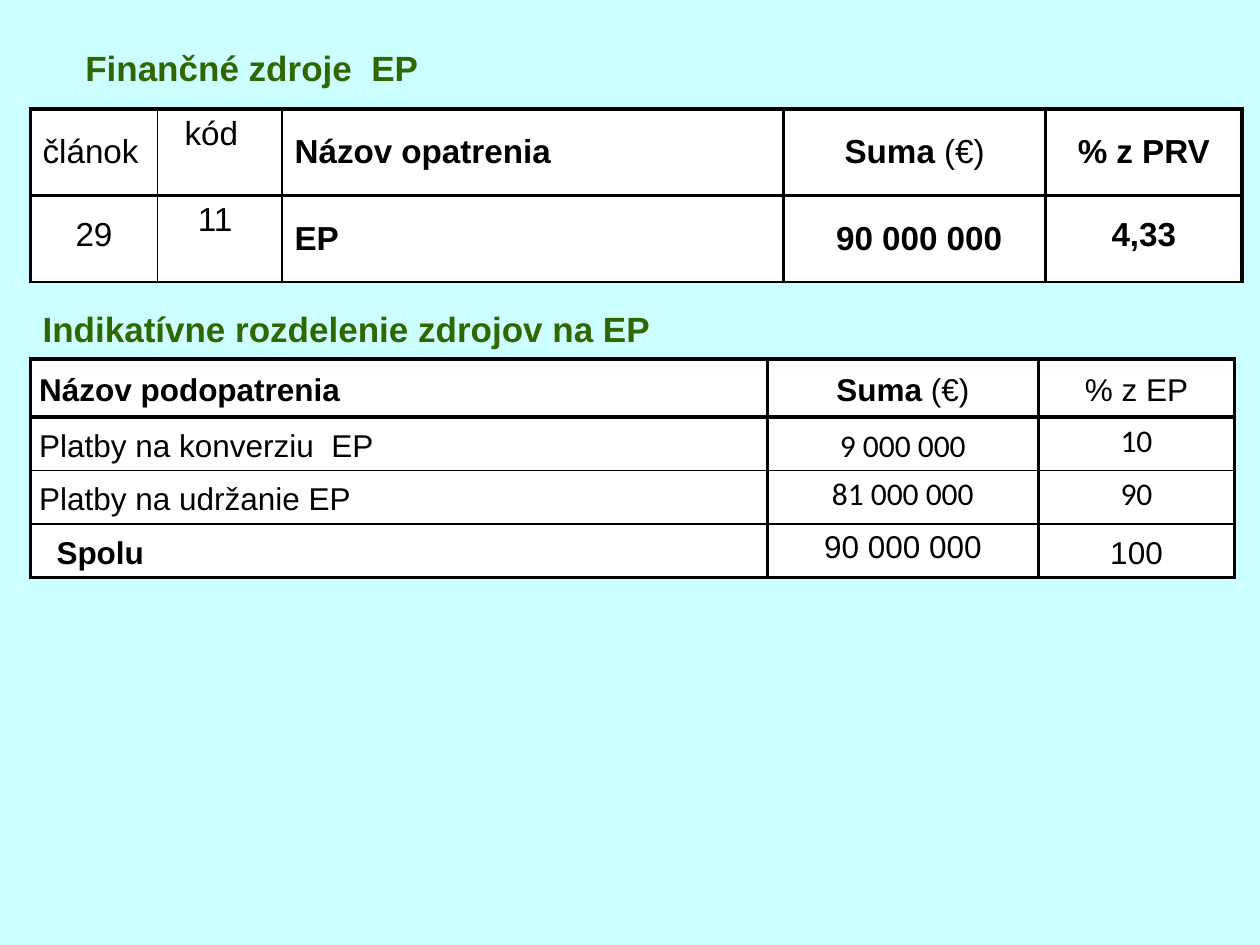
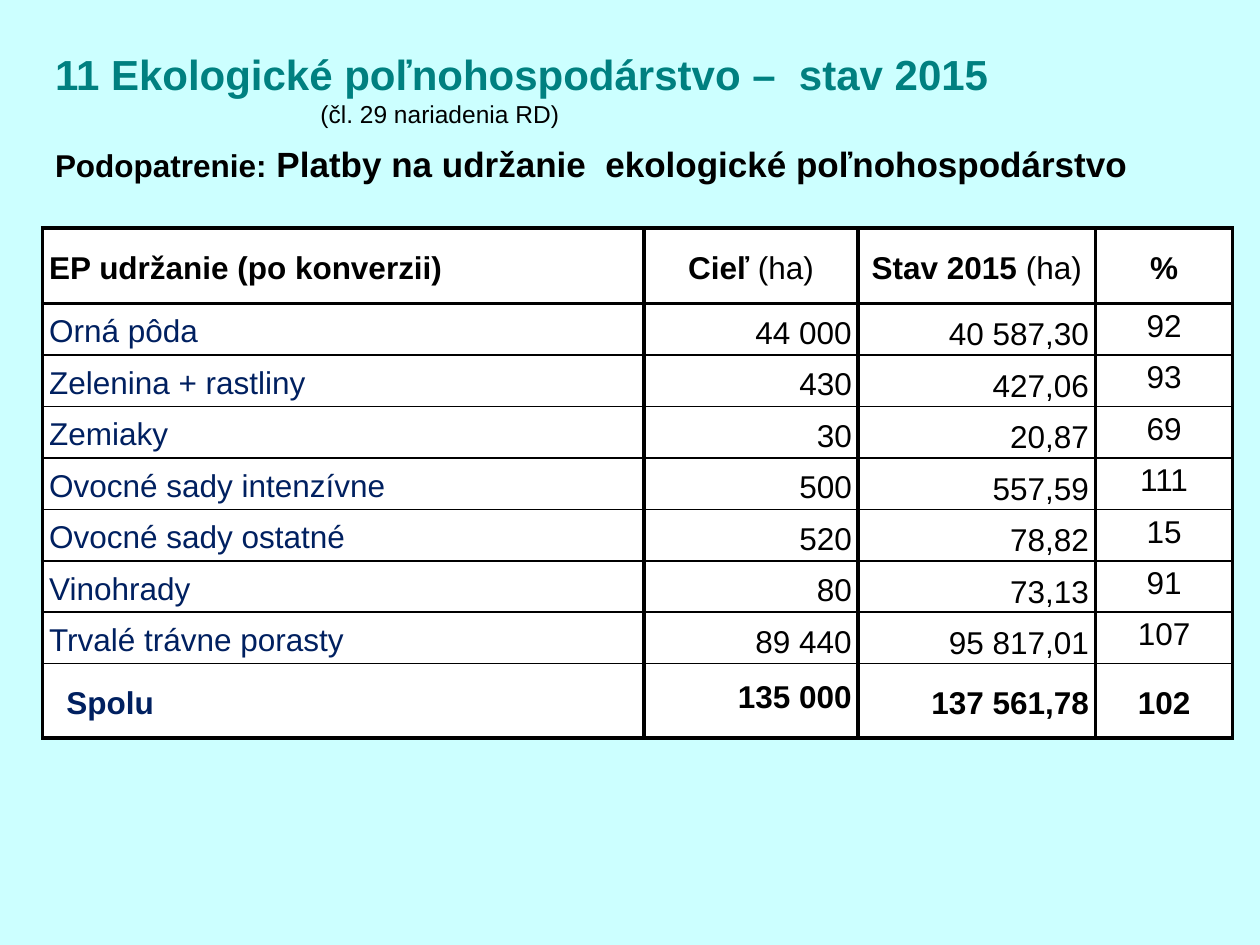
from lxml import etree
from pptx import Presentation
from pptx.dml.color import RGBColor
from pptx.enum.text import MSO_ANCHOR, PP_ALIGN
from pptx.oxml.ns import qn
from pptx.util import Cm, Pt

LEFT, CENTER, RIGHT = PP_ALIGN.LEFT, PP_ALIGN.CENTER, PP_ALIGN.RIGHT
TOP, MIDDLE, BOTTOM = MSO_ANCHOR.TOP, MSO_ANCHOR.MIDDLE, MSO_ANCHOR.BOTTOM

BACKGROUND = RGBColor(0xCC, 0xFF, 0xFF)
WHITE = RGBColor(0xFF, 0xFF, 0xFF)
BLACK = RGBColor(0, 0, 0)
GREEN = RGBColor(0x33, 0x66, 0x00)
TEAL = RGBColor(0x00, 0x80, 0x80)
NAVY = RGBColor(0x00, 0x20, 0x60)

THICK, THIN = 2.25, 1
HEADING = {"size": 20, "bold": True, "color": GREEN}
BOLD = {"bold": True}
PLAIN = {"bold": False}


def cell(*runs, font=None, align=LEFT, anchor=MIDDLE, spacing=1.15, **margins):
    return {"runs": runs, "font": font or {}, "align": align, "anchor": anchor,
            "spacing": spacing, "margins": margins}


class SlideBuilder:
    font_defaults = {"name": "Arial", "size": 18, "bold": False, "color": BLACK}

    def __init__(self, presentation):
        self.presentation = presentation
        self.slide = None

    def new_slide(self):
        self.slide = self.presentation.slides.add_slide(self.presentation.slide_layouts[6])
        fill = self.slide.background.fill
        fill.solid()
        fill.fore_color.rgb = BACKGROUND

    def fill_paragraph(self, paragraph, runs, font, align=LEFT, spacing=None, indent=0):
        if indent:
            properties = paragraph._p.get_or_add_pPr()
            properties.set("marL", str(Cm(indent)))
            properties.set("indent", "0")
        for name, value in {"alignment": align, "line_spacing": spacing}.items():
            setattr(paragraph, name, value)
        for item in runs:
            text, changes = (item, {}) if isinstance(item, str) else item
            values = {**self.font_defaults, **font, **changes}
            run = paragraph.add_run()
            run.text = text
            run.font.color.rgb = values.pop("color")
            values["size"] = Pt(values["size"])
            for name, value in values.items():
                setattr(run.font, name, value)

    def text(self, left, top, width, height, *lines, anchor=TOP):
        box = self.slide.shapes.add_textbox(Cm(left), Cm(top), Cm(width), Cm(height))
        frame = box.text_frame
        frame.word_wrap = True
        frame.vertical_anchor = anchor
        for index, line in enumerate(lines):
            paragraph = frame.add_paragraph() if index else frame.paragraphs[0]
            self.fill_paragraph(paragraph, **line)

    def heading(self, left, top, text):
        self.text(left, top, 22.91, 1.7,
                  {"runs": [text], "font": HEADING, "spacing": 0.75}, anchor=MIDDLE)

    def border(self, table_cell, side, width):
        properties = table_cell._tc.get_or_add_tcPr()
        line = etree.SubElement(properties, qn(f"a:ln{side}"), w=str(Pt(width)))
        fill = etree.SubElement(line, qn("a:solidFill"))
        etree.SubElement(fill, qn("a:srgbClr"), val=str(BLACK))

    def table(self, left, top, columns, rows, cells, verticals, horizontals,
              margins, font):
        shape = self.slide.shapes.add_table(len(rows), len(columns), Cm(left), Cm(top),
                                            Cm(sum(columns)), Cm(sum(rows)))
        table = shape.table
        table.first_row = table.horz_banding = False
        for column, width in zip(table.columns, columns):
            column.width = Cm(width)
        for row, height in zip(table.rows, rows):
            row.height = Cm(height)
        for r, row_cells in enumerate(cells):
            for c, content in enumerate(row_cells):
                table_cell = table.cell(r, c)
                edges = {"L": verticals[c], "R": verticals[c + 1],
                         "T": horizontals[r], "B": horizontals[r + 1]}
                for side, width in edges.items():
                    self.border(table_cell, side, width)
                table_cell.fill.solid()
                table_cell.fill.fore_color.rgb = WHITE
                table_cell.vertical_anchor = content["anchor"]
                for side, margin in {**margins, **content["margins"]}.items():
                    setattr(table_cell, f"margin_{side}", Cm(margin))
                self.fill_paragraph(table_cell.text_frame.paragraphs[0], content["runs"],
                                    {**font, **content["font"]}, content["align"],
                                    content["spacing"])


def margins(horizontal, vertical):
    return {"left": horizontal, "right": horizontal, "top": vertical, "bottom": vertical}


def build_funding(builder):
    builder.new_slide()
    builder.heading(1.47, 0.61, "Finančné zdroje  EP")
    measures = [
        [cell("článok", spacing=1),
         cell("kód", align=CENTER, anchor=TOP, spacing=1, right=0.6),
         cell("Názov opatrenia", font=BOLD, spacing=1),
         cell("Suma ", ("(€)", PLAIN), font=BOLD, align=CENTER, spacing=1),
         cell("% z PRV", font=BOLD, align=CENTER, spacing=1)],
        [cell("29", align=CENTER, spacing=0.75),
         cell("11", anchor=TOP, spacing=1, left=0.81),
         cell("EP", font=BOLD, spacing=1),
         cell("90 000 000", font=BOLD, align=CENTER, spacing=1, left=0.43),
         cell("4,33", font=BOLD, align=CENTER, spacing=0.75)],
    ]
    builder.table(0.61, 2.2, [2.57, 2.51, 10.11, 5.28, 3.96], [1.74, 1.74], measures,
                  [THICK, THIN, THIN, THICK, THICK, THICK], [THICK, THICK, THIN],
                  margins(0.25, 0.13), {"size": 19})

    builder.heading(0.61, 5.87, "Indikatívne rozdelenie zdrojov na EP")
    calibri = {"name": "Calibri"}
    payments = [
        [cell("Názov podopatrenia", font=BOLD),
         cell("Suma ", ("(€)", PLAIN), font=BOLD, align=CENTER),
         cell("% z EP", align=CENTER)],
        [cell("Platby na konverziu  EP"),
         cell("9 000 000", font=calibri, align=CENTER),
         cell("10", font=calibri, align=CENTER, spacing=0.75)],
        [cell("Platby na udržanie EP"),
         cell("81 000 000", font=calibri, align=CENTER, spacing=0.75),
         cell("90", font=calibri, align=CENTER, spacing=0.75)],
        [cell("Spolu", font=BOLD, left=0.53),
         cell("90 000 000", align=CENTER, spacing=0.75),
         cell("100", align=CENTER)],
    ]
    builder.table(0.61, 7.24, [14.86, 5.46, 3.96], [1.17, 1.07, 1.02, 1.02], payments,
                  [THICK] * 4, [THICK, THICK, THIN, THIN, THICK],
                  margins(0.18, 0.1), {})


def build_status(builder):
    builder.new_slide()
    builder.text(
        0.86, 0.86, 24.54, 1.88,
        {"runs": ["11 Ekologické poľnohospodárstvo –  stav 2015"],
         "font": {"size": 24, "bold": True, "color": TEAL}},
        {"runs": ["(čl. 29 nariadenia RD)"], "font": {"size": 14}, "indent": 5.35})
    builder.text(
        0.86, 2.74, 23.44, 1.12,
        {"runs": [("Podopatrenie:", {"size": 18}),
                  " Platby na udržanie  ekologické poľnohospodárstvo"],
         "font": {"size": 20, "bold": True}})

    crops = [
        ("Orná pôda", "44 000", "40 587,30", "92"),
        ("Zelenina + rastliny", "430", "427,06", "93"),
        ("Zemiaky", "30", "20,87", "69"),
        ("Ovocné sady intenzívne", "500", "557,59", "111"),
        ("Ovocné sady ostatné", "520", "78,82", "15"),
        ("Vinohrady", "80", "73,13", "91"),
        ("Trvalé trávne porasty", "89 440", "95 817,01", "107"),
    ]
    no_margins = margins(0, 0)
    header = [cell("EP udržanie (po konverzii)", font=BOLD),
              cell("Cieľ ", ("(ha)", PLAIN), font=BOLD, align=CENTER),
              cell("Stav 2015 ", ("(ha)", PLAIN), font=BOLD, align=CENTER),
              cell("%", font=BOLD, align=CENTER, **no_margins)]
    body = [[cell(crop, font={"color": NAVY}),
             cell(target, align=RIGHT, anchor=BOTTOM),
             cell(status, align=RIGHT, anchor=BOTTOM, spacing=0.75),
             cell(share, align=CENTER, spacing=0.75, **no_margins)]
            for crop, target, status, share in crops]
    total = [cell("Spolu", font={"color": NAVY, "bold": True}, left=0.48),
             cell("135 000", font=BOLD, align=RIGHT, spacing=0.75),
             cell("137 561,78", font=BOLD, align=RIGHT),
             cell("102", font=BOLD, align=CENTER, **no_margins)]
    builder.table(0.86, 4.6, [12.12, 4.32, 4.78, 2.77],
                  [1.52] + [1.01] * len(crops) + [1.5], [header, *body, total],
                  [THICK] * 5, [THICK, THICK] + [THIN] * len(crops) + [THICK],
                  margins(0.13, 0.08), {})


def main():
    presentation = Presentation()
    presentation.slide_width = Cm(25.4)
    presentation.slide_height = Cm(19.05)
    builder = SlideBuilder(presentation)
    build_funding(builder)
    build_status(builder)
    presentation.save("out.pptx")


if __name__ == "__main__":
    main()
